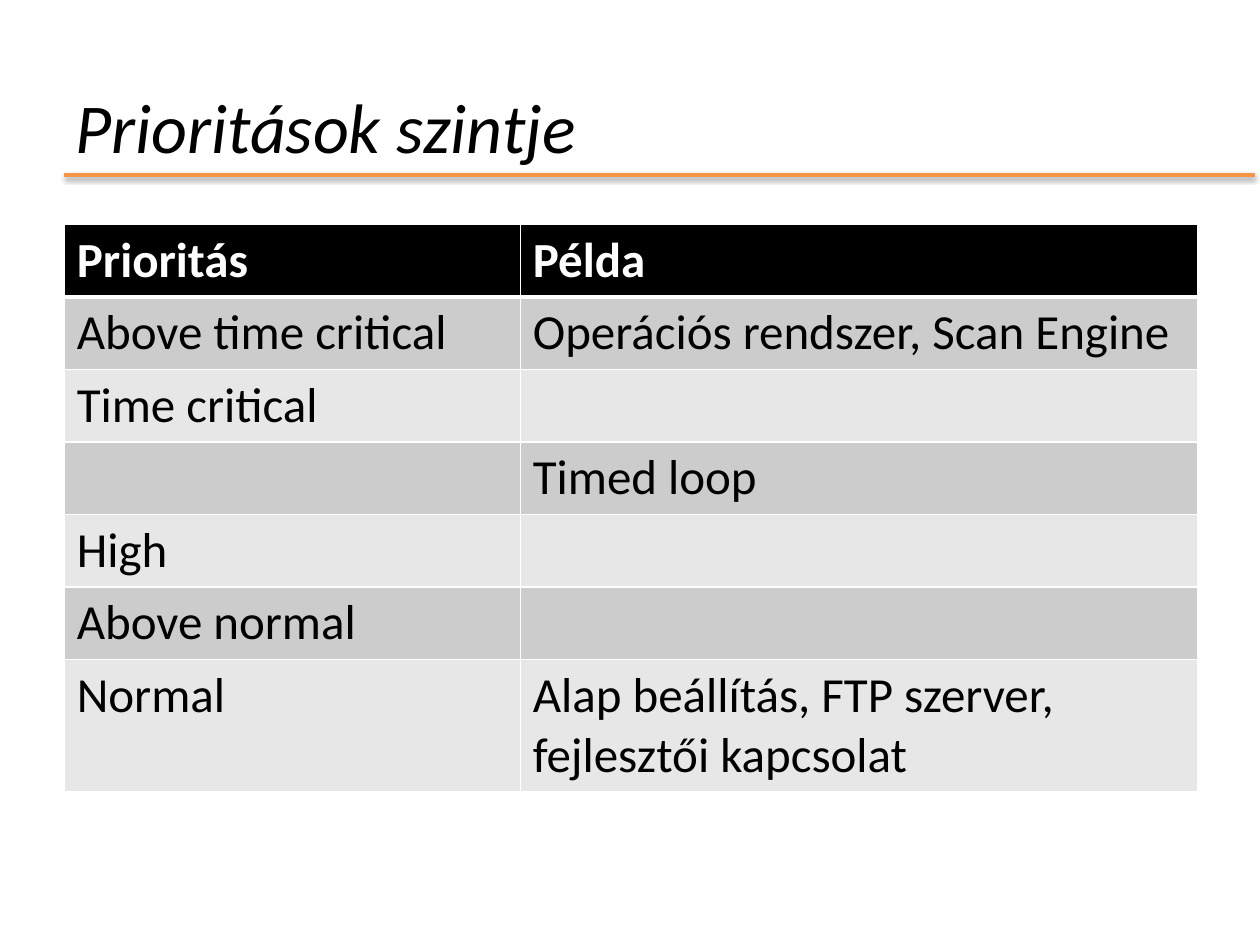
import pptx
import pptx.util
import pptx.dml.color
import pptx.enum.shapes
import pptx.enum.text
import pptx.oxml
import pptx.oxml.ns

Pt = pptx.util.Pt

# Content
TITLE = "Prioritások szintje"
ROWS = [
    ("Prioritás", "Példa"),
    ("Above time critical", "Operációs rendszer, Scan Engine"),
    ("Time critical", ""),
    ("", "Timed loop"),
    ("High", ""),
    ("Above normal", ""),
    ("Normal", "Alap beállítás, FTP szerver, fejlesztői kapcsolat"),
]

# Style, lengths in points
FONT = "Calibri"
COLORS = {"text": "000000", "header": "000000", "header_text": "FFFFFF",
          "odd": "CCCCCC", "even": "E7E7E7", "border": "FFFFFF",
          "rule": "F79646", "shadow": "000000"}
LEFT = 36.75
TABLE_TOP = 128.2
COL_WIDTHS = (260.6, 387.4)
ROW_HEIGHT, LAST_HEIGHT = 41.4, 75
RULE_Y, RULE_END = 100, 717


def rgb(name):
    return pptx.dml.color.RGBColor.from_string(COLORS[name])


def add_run(p, text, size, color, bold=False, italic=False):
    r = p.add_run()
    r.text = text
    r.font.name, r.font.size = FONT, Pt(size)
    r.font.bold, r.font.italic = bold, italic
    r.font.color.rgb = rgb(color)


def set_borders(cell, widths):
    tcPr = cell._tc.get_or_add_tcPr()
    for i, (side, width) in enumerate(widths.items()):
        tcPr.insert(i, pptx.oxml.parse_xml(
            f'<a:ln{side} {pptx.oxml.ns.nsdecls("a")} w="{Pt(width)}"><a:solidFill>'
            f'<a:srgbClr val="{COLORS["border"]}"/></a:solidFill></a:ln{side}>'))


prs = pptx.Presentation()
prs.slide_width, prs.slide_height = Pt(720), Pt(540)
s = prs.slides.add_slide(prs.slide_layouts[5])

# Title
title = s.shapes.title
title.left, title.top, title.width, title.height = Pt(36), Pt(9.4), Pt(477.4), Pt(90)
tf = title.text_frame
tf.word_wrap = True
tf.vertical_anchor = pptx.enum.text.MSO_ANCHOR.BOTTOM
p = tf.paragraphs[0]
p.alignment = pptx.enum.text.PP_ALIGN.LEFT
add_run(p, TITLE, 40, "text", italic=True)

# Rule under the title, with a soft shadow
rule = s.shapes.add_connector(pptx.enum.shapes.MSO_CONNECTOR.STRAIGHT,
                              Pt(LEFT), Pt(RULE_Y), Pt(RULE_END), Pt(RULE_Y))
rule.line.color.rgb = rgb("rule")
rule.line.width = Pt(2)
rule._element.spPr.append(pptx.oxml.parse_xml(
    f'<a:effectLst {pptx.oxml.ns.nsdecls("a")}>'
    f'<a:outerShdw blurRad="{Pt(3.1)}" dist="{Pt(1.6)}" dir="5400000" rotWithShape="0">'
    f'<a:srgbClr val="{COLORS["shadow"]}"><a:alpha val="38000"/></a:srgbClr>'
    '</a:outerShdw></a:effectLst>'))

# Priority table
heights = [ROW_HEIGHT] * (len(ROWS) - 1) + [LAST_HEIGHT]
table = s.shapes.add_table(len(ROWS), len(COL_WIDTHS), Pt(LEFT), Pt(TABLE_TOP),
                           Pt(sum(COL_WIDTHS)), Pt(sum(heights))).table
for column, width in zip(table.columns, COL_WIDTHS):
    column.width = Pt(width)
for i, (texts, height) in enumerate(zip(ROWS, heights)):
    table.rows[i].height = Pt(height)
    header = i == 0
    fill = "header" if header else "odd" if i % 2 else "even"
    for j, text in enumerate(texts):
        cell = table.cell(i, j)
        cell.fill.solid()
        cell.fill.fore_color.rgb = rgb(fill)
        set_borders(cell, {"L": 1, "R": 1, "T": 3 if i == 1 else 1, "B": 3 if header else 1})
        if text:
            add_run(cell.text_frame.paragraphs[0], text, 28,
                    "header_text" if header else "text", bold=header)

prs.save("out.pptx")
